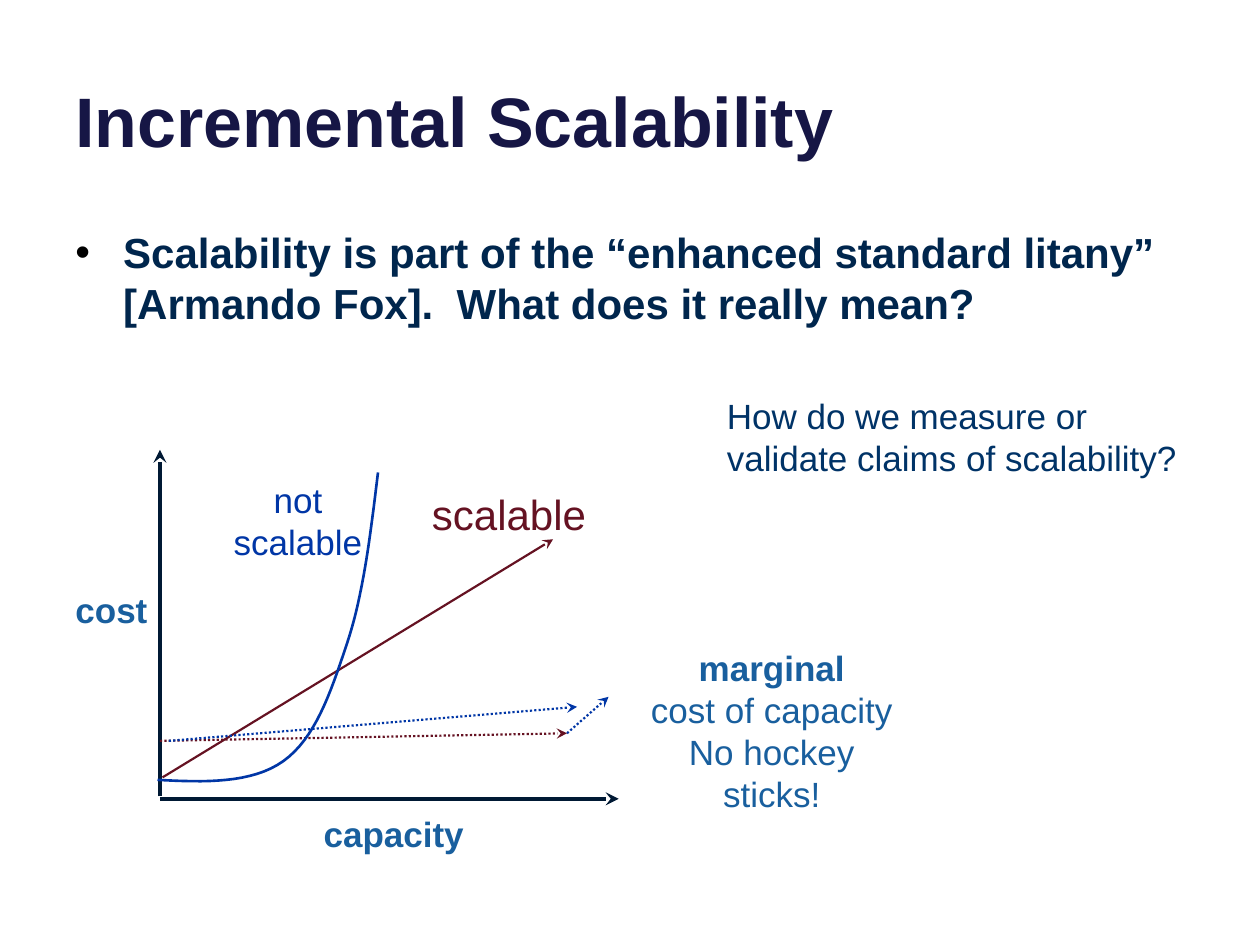
from lxml.etree import SubElement
from pptx import Presentation
from pptx.dml.color import RGBColor
from pptx.enum.dml import MSO_LINE
from pptx.enum.shapes import MSO_CONNECTOR
from pptx.enum.text import MSO_ANCHOR, MSO_AUTO_SIZE, PP_ALIGN
from pptx.oxml.ns import qn
from pptx.util import Inches, Pt

NAVY, AXIS, BLUE, RED, LABEL = "00264D", "001934", "0036A6", "651222", "195F9E"
CURVE_START = (1.25, 6.19)
CURVE_PIECES = [
    ((1.62, 6.21), (2, 6.22), (2.25, 6.04)),
    ((2.5, 5.86), (2.62, 5.51), (2.75, 5.12)),
    ((2.88, 4.74), (2.94, 4.25), (3, 3.75)),
]
STEPS = 16


def color(value):
    return RGBColor.from_string(value)


def add_text(page, place, lines, size, ink, align=PP_ALIGN.LEFT, wrap=True,
             anchor=MSO_ANCHOR.TOP, grow=True):
    box = page.shapes.add_textbox(*map(Inches, place))
    frame = box.text_frame
    frame.word_wrap = wrap
    frame.vertical_anchor = anchor
    frame.auto_size = MSO_AUTO_SIZE.SHAPE_TO_FIT_TEXT if grow else MSO_AUTO_SIZE.NONE
    for index, (words, bold) in enumerate(lines):
        para = frame.add_paragraph() if index else frame.paragraphs[0]
        para.alignment = align
        span = para.add_run()
        span.text = words
        span.font.name = "Arial"
        span.font.size = Pt(size)
        span.font.bold = bold
        span.font.color.rgb = color(ink)
    return box


def add_bullet(para, indent, ink):
    settings = para._p.get_or_add_pPr()
    settings.set("marL", str(Inches(indent)))
    settings.set("indent", str(-Inches(indent)))
    bullet_color = SubElement(settings, qn("a:buClr"))
    SubElement(bullet_color, qn("a:srgbClr"), val=ink)
    SubElement(settings, qn("a:buFont"), typeface="Arial")
    SubElement(settings, qn("a:buChar"), char="•")


def add_arrow(page, start, end, ink, width=1.25, dotted=False):
    arrow = page.shapes.add_connector(
        MSO_CONNECTOR.STRAIGHT, *map(Inches, start + end))
    arrow.line.color.rgb = color(ink)
    arrow.line.width = Pt(width)
    if dotted:
        arrow.line.dash_style = MSO_LINE.ROUND_DOT
    SubElement(arrow.line._get_or_add_ln(), qn("a:tailEnd"), type="stealth")
    SubElement(arrow._element.spPr, qn("a:effectLst"))


def bezier_point(corners, share):
    rest = 1 - share
    weights = (rest**3, 3 * rest**2 * share, 3 * rest * share**2, share**3)
    return tuple(Inches(sum(weight * value for weight, value in zip(weights, axis)))
                 for axis in zip(*corners))


def add_curve(page, start, pieces, ink, width):
    builder = page.shapes.build_freeform(*map(Inches, start))
    points = []
    for piece in pieces:
        corners = (start, *piece)
        points += [bezier_point(corners, step / STEPS) for step in range(1, STEPS + 1)]
        start = piece[-1]
    builder.add_line_segments(points, close=False)
    curve = builder.convert_to_shape()
    curve.shadow.inherit = False
    curve.fill.background()
    curve.line.color.rgb = color(ink)
    curve.line.width = Pt(width)


def add_heading(page):
    add_text(page, (0.5, -0.37, 9, 1.7), [("Incremental Scalability", True)], 40,
             "161645", anchor=MSO_ANCHOR.BOTTOM, grow=False)
    body = add_text(page, (0.5, 1.75, 9, 0.83), [(
        "Scalability is part of the “enhanced standard litany” "
        "[Armando Fox].  What does it really mean?", True)], 24, NAVY, grow=False)
    para = body.text_frame.paragraphs[0]
    para.space_before = Pt(9)
    add_bullet(para, 0.38, "000000")


def add_graph(page):
    add_arrow(page, (1.27, 6.32), (1.27, 3.57), AXIS, 2.5)
    add_arrow(page, (1.27, 6.34), (4.91, 6.34), AXIS, 2.5)
    add_arrow(page, (1.29, 6.17), (4.39, 4.28), RED)
    add_arrow(page, (1.27, 5.88), (4.5, 5.82), RED, dotted=True)
    add_arrow(page, (1.34, 5.88), (4.58, 5.61), BLUE, dotted=True)
    add_arrow(page, (4.5, 5.82), (4.83, 5.53), BLUE, dotted=True)
    add_curve(page, CURVE_START, CURVE_PIECES, BLUE, 1.5)


def add_labels(page):
    center = PP_ALIGN.CENTER
    add_text(page, (0.5, 4.62, 0.78, 0.44), [("cost", True)], 20, LABEL, wrap=False)
    add_text(page, (2.47, 6.4, 1.34, 0.44), [("capacity", True)], 20, LABEL, wrap=False)
    add_text(page, (5, 5.08, 2.25, 1.45),
             [("marginal", True), ("cost of capacity", False),
              ("No hockey sticks!", False)], 20, LABEL, center)
    add_text(page, (1.75, 3.75, 1.23, 0.77), [("not", False), ("scalable", False)],
             20, BLUE, center, wrap=False)
    add_text(page, (5.67, 3.08, 3.83, 0.77),
             [("How do we measure or validate claims of scalability?", False)],
             20, "003367")
    add_text(page, (3.33, 3.83, 1.44, 0.51), [("scalable", False)], 24, RED, wrap=False)


def main():
    deck = Presentation()
    deck.slide_width, deck.slide_height = Inches(10), Inches(7.5)
    page = deck.slides.add_slide(deck.slide_layouts[6])
    add_heading(page)
    add_graph(page)
    add_labels(page)
    deck.save("out.pptx")


if __name__ == "__main__":
    main()
